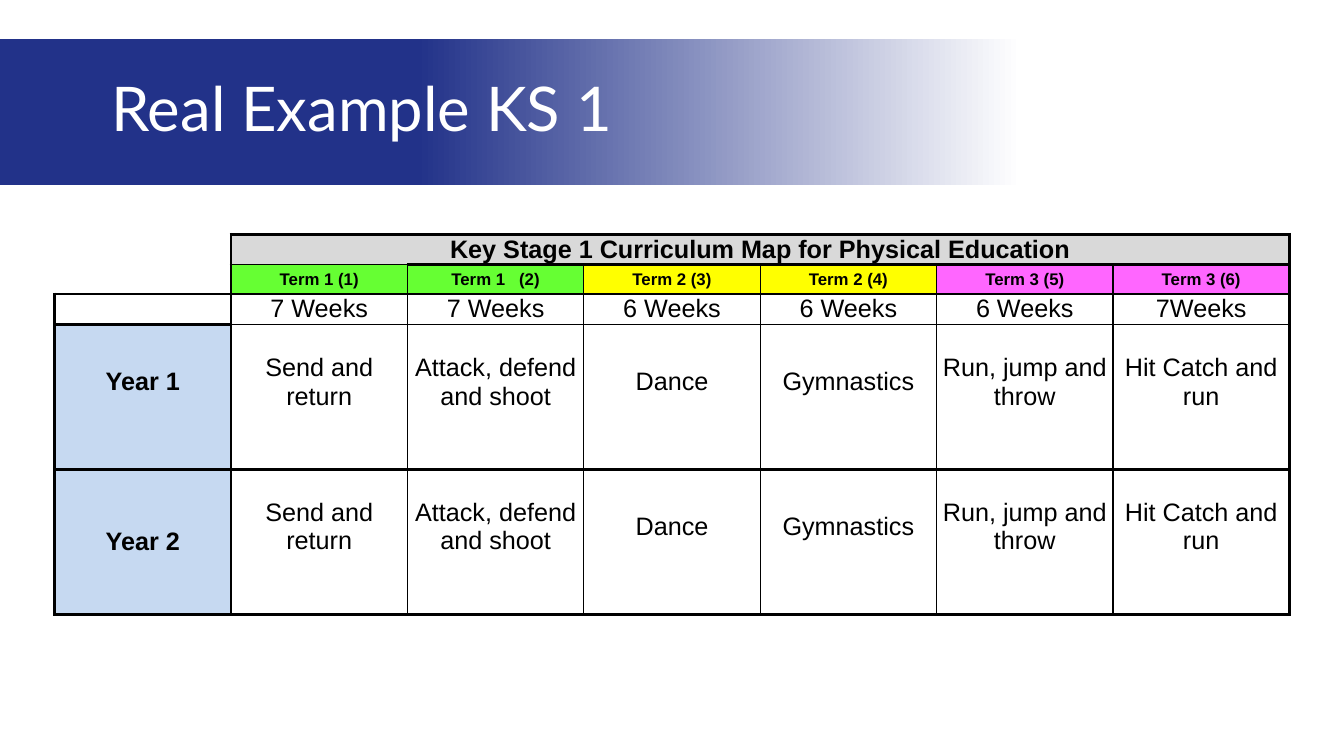
from lxml.etree import SubElement
from pptx import Presentation
from pptx.dml.color import RGBColor
from pptx.enum.text import MSO_ANCHOR, PP_ALIGN
from pptx.oxml.ns import qn
from pptx.util import Pt

PX = 9525  # EMU; 96 px to the inch
NAVY = RGBColor(0x22, 0x32, 0x89)
WHITE = RGBColor(0xFF, 0xFF, 0xFF)
BLACK = RGBColor(0x00, 0x00, 0x00)
GREY = RGBColor(0xD9, 0xD9, 0xD9)
GREEN = RGBColor(0x66, 0xFF, 0x33)
YELLOW = RGBColor(0xFF, 0xFF, 0x00)
PINK = RGBColor(0xFF, 0x66, 0xFF)
PALE_BLUE = RGBColor(0xC6, 0xD9, 0xF1)

THIN, THICK = 1, 2.25
COL_W = 168
ROW_H = [29, 28, 29, 138, 138]
LAST_COL = 6
LIFT = 28  # bottom inset that raises text by half a line

HEADING = "Key Stage 1 Curriculum Map for Physical Education"
TERMS = ["Term 1 (1)", "Term 1   (2)", "Term 2 (3)",
         "Term 2 (4)", "Term 3 (5)", "Term 3 (6)"]
TERM_FILLS = [GREEN, GREEN, YELLOW, YELLOW, PINK, PINK]
WEEKS = ["7 Weeks", "7 Weeks", "6 Weeks", "6 Weeks", "6 Weeks", "7Weeks"]
ACTIVITIES = ["Send and return", "Attack, defend and shoot", "Dance",
              "Gymnastics", "Run, jump and throw", "Hit Catch and run"]


def px(n):
    return int(n * PX)


def write(tf, text, size=18, bold=False, color=BLACK, font="Arial",
          align=PP_ALIGN.CENTER, spacing=None):
    p = tf.paragraphs[0]
    p.alignment = align
    p.line_spacing = spacing
    if not text:
        SubElement(p._p, qn("a:endParaRPr"), sz=str(size * 100))
        return
    r = p.add_run()
    r.text = text
    r.font.size, r.font.bold, r.font.name = Pt(size), bold, font
    r.font.color.rgb = color


def add_title_bar(slide, text):
    sp = slide.shapes.title
    sp.left, sp.top, sp.width, sp.height = px(0), px(37), px(1280), px(139)
    sp.fill.gradient()
    sp.fill.gradient_angle = 0
    for stop, position, color in zip(sp.fill.gradient_stops, (0.31, 0.76), (NAVY, WHITE)):
        stop.position = position
        stop.color.rgb = color
    tf = sp.text_frame
    tf.margin_left = px(106)
    tf.vertical_anchor = MSO_ANCHOR.MIDDLE
    write(tf, text, size=44, color=WHITE, font="Lato", align=PP_ALIGN.LEFT, spacing=0.9)


def border_widths(row, col):
    """Widths in points for left, right, top and bottom; None is no line."""
    if col == 0 and row < 2:
        return None, THICK, None, THICK if row == 1 else None
    thick = (
        col <= 1,
        col in (0, LAST_COL) or row == 0,
        col == 0 or row in (0, 4) or (row == 1 and col > 1),
        col == 0 or row >= 3,
    )
    return [THICK if t else THIN for t in thick]


def set_borders(cell, widths):
    tc_pr = cell._tc.get_or_add_tcPr()
    for side, width in zip("LRTB", widths):
        ln = SubElement(tc_pr, qn(f"a:ln{side}"), w=str(Pt(width or 0)))
        if width is None:
            SubElement(ln, qn("a:noFill"))
        else:
            fill = SubElement(ln, qn("a:solidFill"))
            SubElement(fill, qn("a:srgbClr"), val=str(BLACK))


def fill_cell(table, row, col, text="", fill=WHITE, lift=0, **fmt):
    cell = table.cell(row, col)
    set_borders(cell, border_widths(row, col))
    cell.fill.solid()
    cell.fill.fore_color.rgb = fill
    cell.margin_left = cell.margin_right = px(6)
    cell.margin_top, cell.margin_bottom = 0, px(lift)
    cell.vertical_anchor = MSO_ANCHOR.MIDDLE
    write(cell.text_frame, text, **fmt)


def add_curriculum_table(slide):
    frame = slide.shapes.add_table(len(ROW_H), LAST_COL + 1, px(52), px(223),
                                   px(COL_W * (LAST_COL + 1)), px(sum(ROW_H)))
    table = frame.table
    table.first_row = table.horz_banding = False
    for column in table.columns:
        column.width = px(COL_W)
    for row, height in zip(table.rows, ROW_H):
        row.height = px(height)

    for row in range(3):
        fill_cell(table, row, 0, size=12)
    for i, (term, fill, weeks, activity) in enumerate(
            zip(TERMS, TERM_FILLS, WEEKS, ACTIVITIES)):
        col = i + 1
        fill_cell(table, 0, col, HEADING if i == 0 else "", fill=GREY, bold=True)
        fill_cell(table, 1, col, term, fill=fill, size=12, bold=True)
        fill_cell(table, 2, col, weeks)
        for row in (3, 4):
            fill_cell(table, row, col, activity, lift=LIFT)
    table.cell(0, 1).merge(table.cell(0, LAST_COL))
    fill_cell(table, 3, 0, "Year 1", fill=PALE_BLUE, lift=LIFT, bold=True)
    fill_cell(table, 4, 0, "Year 2", fill=PALE_BLUE, bold=True)


def main():
    prs = Presentation()
    prs.slide_width, prs.slide_height = px(1280), px(720)
    slide = prs.slides.add_slide(prs.slide_layouts[5])
    add_title_bar(slide, "Real Example KS 1")
    add_curriculum_table(slide)
    prs.save("out.pptx")


if __name__ == "__main__":
    main()
